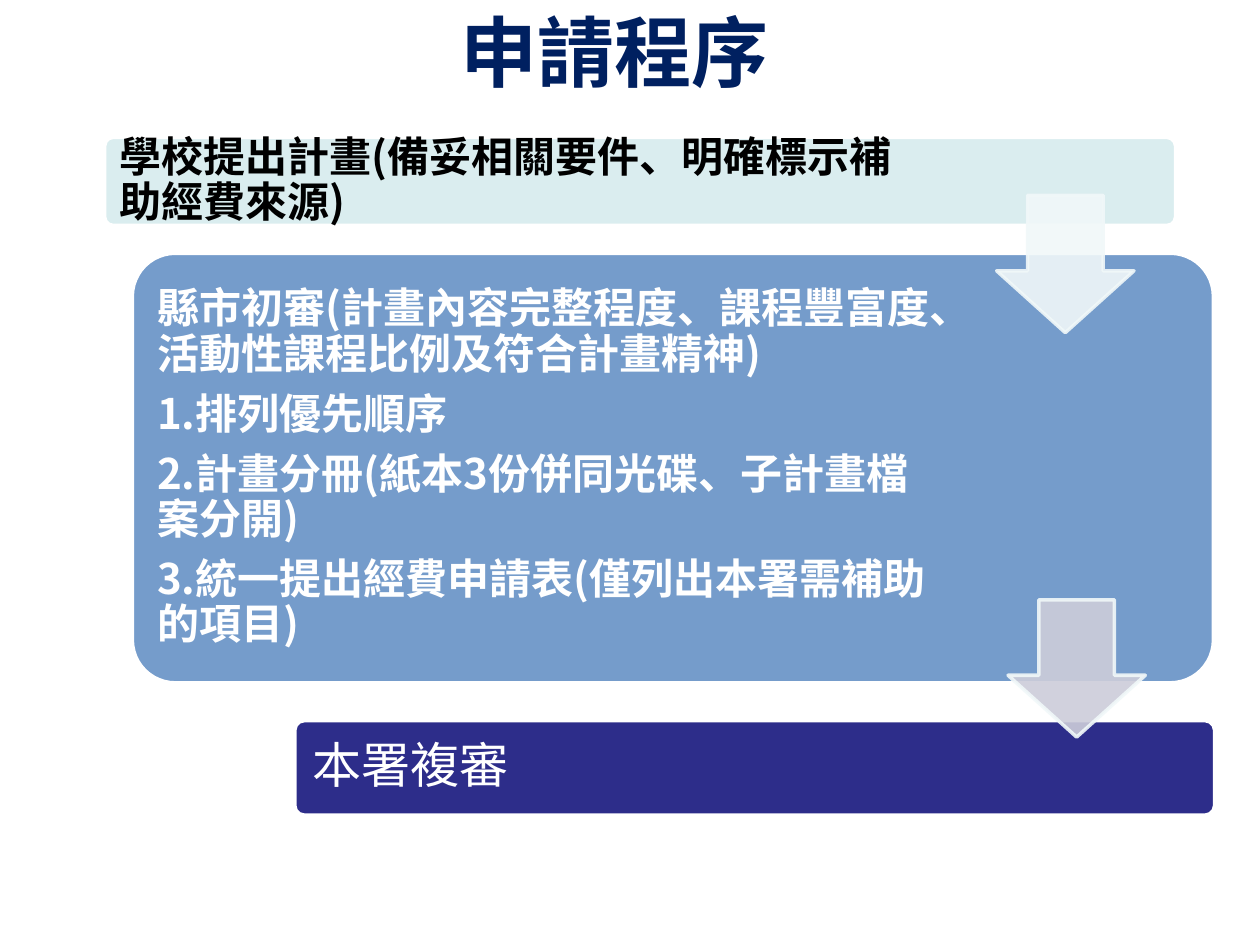
from lxml.etree import SubElement
from pptx import Presentation
from pptx.dml.color import RGBColor
from pptx.enum.shapes import MSO_SHAPE
from pptx.enum.text import MSO_ANCHOR, MSO_AUTO_SIZE, PP_ALIGN
from pptx.oxml.ns import qn
from pptx.util import Pt

FONT = "Noto Sans CJK SC"
COLORS = {
    "title": "002060", "black": "000000", "white": "FFFFFF",
    "school": "DAEDEF", "county": "759CCB", "agency": "2D2D8A",
    "pale": "F1F8F9", "lilac": "CDCDDA",
}

# Each step: box, fill, text inset from box, text width, margin, size, bold, colour, lines
STEPS = [
    ((59.8, 78.5, 612, 50.4), "school", 1.44, 465.1, 7.2, 24, True, "black",
     ["學校提出計畫(備妥相關要件、明確標示補助經費來源)"]),
    ((75.6, 144.7, 617.8, 245.5), "county", 7.2, 456.5, 7.2, 24, True, "white",
     ["縣市初審(計畫內容完整程度、課程豐富度、活動性課程比例及符合計畫精神)",
      "1.排列優先順序",
      "2.計畫分冊(紙本3份併同光碟、子計畫檔案分開)",
      "3.統一提出經費申請表(僅列出本署需補助的項目)"]),
    ((168.5, 411.8, 525.6, 54), "agency", 1.44, 397.4, 8.64, 28, False, "white",
     ["本署複審"]),
]
ARROWS = [((569.5, 111.6, 78.5, 78.5), "pale"),
          ((576, 342.7, 78.5, 78.5), "lilac")]


def color(name):
    return RGBColor.from_string(COLORS[name])


def write_paragraph(para, text, size, bold, color_name):
    span = para.add_run()
    span.text = text
    para.font.size = Pt(size)
    para.font.bold = bold
    para.font.name = FONT
    para.font.color.rgb = color(color_name)
    # East Asian text needs its own typeface on the run
    SubElement(span.font._element, qn("a:ea"), typeface=FONT)


def set_opacity(fill_element, percent):
    tint = fill_element.find(".//" + qn("a:srgbClr"))
    SubElement(tint, qn("a:alpha"), val=str(percent * 1000))


def add_panel(page, kind, box, fill, line, adjustments):
    panel = page.shapes.add_shape(kind, *map(Pt, box))
    panel.shadow.inherit = False
    panel.fill.solid()
    panel.fill.fore_color.rgb = color(fill)
    panel.line.color.rgb = color(line)
    panel.line.width = Pt(2)
    for index, value in enumerate(adjustments):
        panel.adjustments[index] = value
    return panel


def place_title(page, box):
    title = page.shapes.title
    title.left, title.top, title.width, title.height = map(Pt, box)
    frame = title.text_frame
    frame.auto_size = MSO_AUTO_SIZE.NONE
    frame.vertical_anchor = MSO_ANCHOR.MIDDLE
    para = frame.paragraphs[0]
    para.alignment = PP_ALIGN.CENTER
    write_paragraph(para, "申請程序", 44, True, "title")


def add_step(page, box, fill, inset, text_width, margin, size, bold, text_color, lines):
    add_panel(page, MSO_SHAPE.ROUNDED_RECTANGLE, box, fill, "white", [0.1])
    left, top, _, height = box
    label = page.shapes.add_textbox(Pt(left + inset), Pt(top + inset),
                                    Pt(text_width), Pt(height - 2 * inset))
    frame = label.text_frame
    frame.word_wrap = True
    frame.vertical_anchor = MSO_ANCHOR.MIDDLE
    frame.margin_left = frame.margin_right = Pt(margin)
    frame.margin_top = frame.margin_bottom = Pt(margin)
    for index, line in enumerate(lines):
        para = frame.add_paragraph() if index else frame.paragraphs[0]
        para.line_spacing = 0.9
        para.space_after = Pt(size * 0.35)
        write_paragraph(para, line, size, bold, text_color)


def add_arrow(page, box, fill):
    arrow = add_panel(page, MSO_SHAPE.DOWN_ARROW, box, fill, "pale", [0.55, 0.45])
    properties = arrow._element.spPr
    set_opacity(properties.find(qn("a:solidFill")), 90)
    set_opacity(properties.find(qn("a:ln")), 90)


def main():
    deck = Presentation()
    deck.slide_width, deck.slide_height = Pt(720), Pt(540)
    page = deck.slides.add_slide(deck.slide_layouts[5])
    place_title(page, (42.5, 3.6, 617.8, 51.1))
    # Three stages of the procedure
    for step in STEPS:
        add_step(page, *step)
    # Arrows that link the stages
    for box, fill in ARROWS:
        add_arrow(page, box, fill)
    deck.save("out.pptx")


if __name__ == "__main__":
    main()
